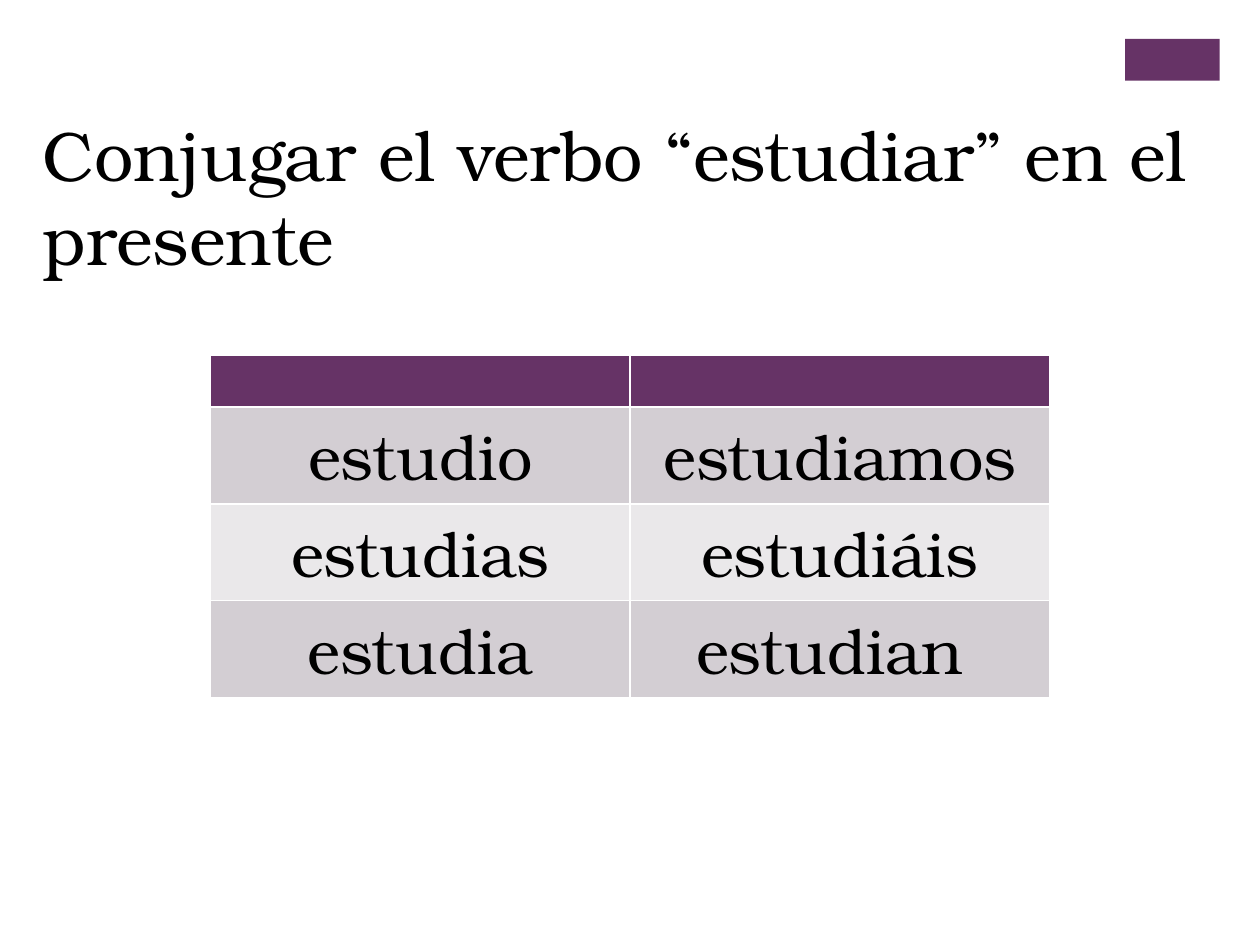
from typing import NamedTuple

from pptx import Presentation
from pptx.dml.color import RGBColor
from pptx.enum.shapes import MSO_SHAPE as Shape
from pptx.enum.text import MSO_ANCHOR as Anchor, MSO_AUTO_SIZE as Fit, PP_ALIGN as Align
from pptx.util import Inches, Pt

PLUM = RGBColor(0x66, 0x33, 0x66)
MAUVE = RGBColor(0xD3, 0xCE, 0xD3)
PALE = RGBColor(0xEA, 0xE8, 0xEA)
BLACK = RGBColor(0, 0, 0)
FONT = "TeX Gyre Bonum"


class Row(NamedTuple):
    forms: tuple[str, str]
    fill: RGBColor
    height: float


ROWS = [
    Row(("", ""), PLUM, 0.41),
    Row(("estudio", "estudiamos"), MAUVE, 0.7),
    Row(("estudias", "estudiáis"), PALE, 0.7),
    Row(("estudia", "estudian "), MAUVE, 0.7),
]


def style(par, size: int, align: Align) -> None:
    par.alignment = align
    par.font.name = FONT
    par.font.size = Pt(size)
    par.font.color.rgb = BLACK


def add_tag(slide) -> None:
    tag = slide.shapes.add_shape(
        Shape.RECTANGLE, Inches(8.93), Inches(0.31), Inches(0.75), Inches(0.33))
    tag.shadow.inherit = False
    tag.fill.solid()
    tag.fill.fore_color.rgb = PLUM
    tag.line.fill.background()


def set_title(slide, text: str) -> None:
    title = slide.shapes.title
    title.left, title.top = Inches(0.24), Inches(0.83)
    title.width, title.height = Inches(9.43), Inches(1.45)
    frame = title.text_frame
    frame.text = text
    frame.word_wrap = True
    frame.auto_size = Fit.NONE
    frame.vertical_anchor = Anchor.MIDDLE
    style(frame.paragraphs[0], 40, Align.LEFT)


def add_verbs(slide, rows: list[Row]) -> None:
    # The default table style supplies the white cell borders
    total = sum(row.height for row in rows)
    table = slide.shapes.add_table(
        len(rows), 2, Inches(1.67), Inches(2.82), Inches(6.66), Inches(total)).table
    for line, row in zip(table.rows, rows):
        line.height = Inches(row.height)
        for cell, form in zip(line.cells, row.forms):
            cell.fill.solid()
            cell.fill.fore_color.rgb = row.fill
            if form:
                cell.text = form
                style(cell.text_frame.paragraphs[0], 36, Align.CENTER)


def main() -> None:
    deck = Presentation()
    deck.slide_width, deck.slide_height = Inches(10), Inches(7.5)
    slide = deck.slides.add_slide(deck.slide_layouts[5])  # title only

    # Corner tag, heading and verb table
    add_tag(slide)
    set_title(slide, "Conjugar el verbo “estudiar” en el presente")
    add_verbs(slide, ROWS)

    deck.save("out.pptx")


if __name__ == "__main__":
    main()
